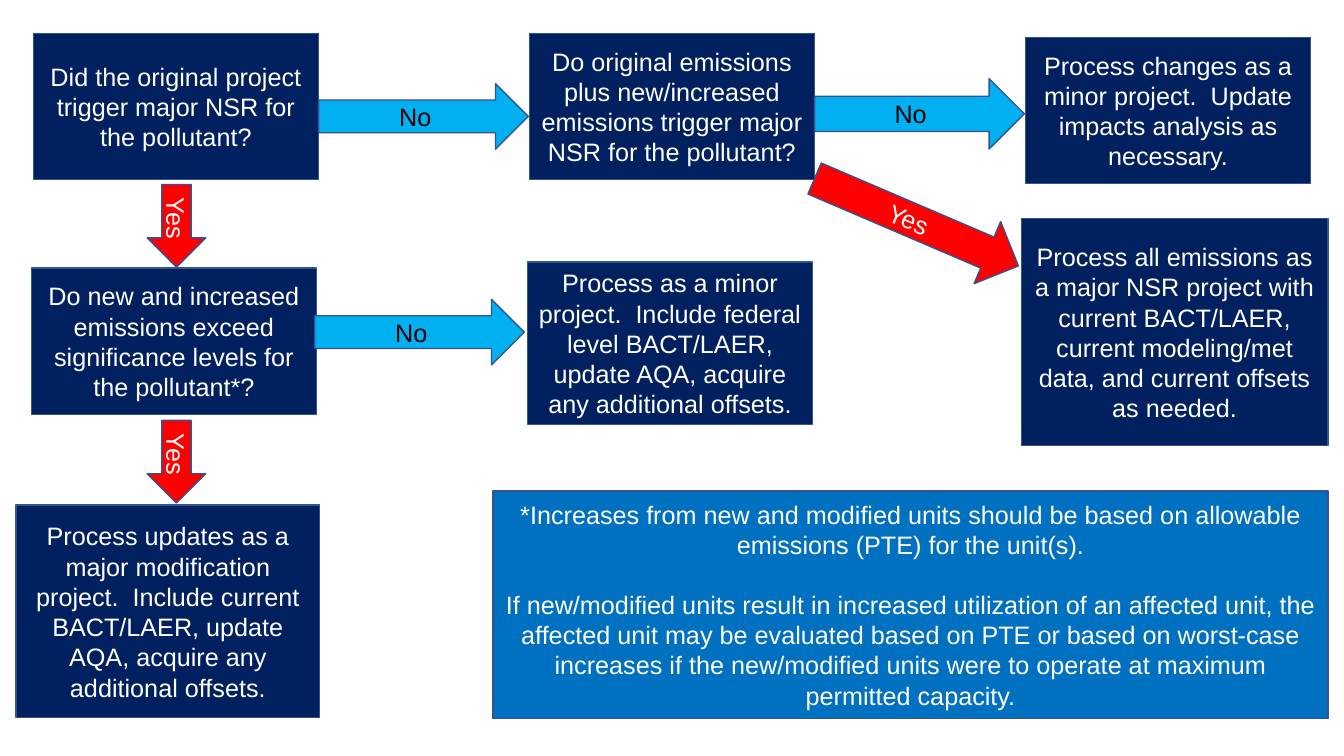
from dataclasses import dataclass

import pptx
import pptx.dml.color
import pptx.enum.shapes
import pptx.enum.text
import pptx.util

Inches = pptx.util.Inches
Kind = pptx.enum.shapes.MSO_SHAPE


@dataclass(frozen=True)
class Theme:
    navy: str = "002060"
    blue: str = "0070C0"
    sky: str = "00B0F0"
    red: str = "FF0000"
    outline: str = "325491"
    white: str = "FFFFFF"
    black: str = "000000"
    font: str = "Arial"
    text_size: int = 18
    paragraph_gap: int = 21
    line_width: int = 1


@dataclass(frozen=True)
class Box:
    left: float
    top: float
    width: float
    height: float

    def inner(self, left, top, width, height):
        """Return a box whose left and top are offsets within this one."""
        return Box(self.left + left, self.top + top, width, height)


THEME = Theme()
NODE_WIDTH, NODE_HEIGHT = 2.83, 1.45
COLUMN_STEP = 4.92
ARROW_WIDTH = 2.08


def color(value):
    return pptx.dml.color.RGBColor.from_string(value)


def add_block(page, box, kind, fill, text_color, paragraphs, rotation=0):
    shape = page.shapes.add_shape(kind, Inches(box.left), Inches(box.top),
                                  Inches(box.width), Inches(box.height))
    shape.rotation = rotation
    shape.shadow.inherit = False
    shape.fill.solid()
    shape.fill.fore_color.rgb = color(fill)
    shape.line.color.rgb = color(THEME.outline)
    shape.line.width = pptx.util.Pt(THEME.line_width)
    frame = shape.text_frame
    frame.word_wrap = True
    frame.vertical_anchor = pptx.enum.text.MSO_ANCHOR.MIDDLE
    frame.text = "\n".join(paragraphs)
    for index, para in enumerate(frame.paragraphs):
        para.alignment = pptx.enum.text.PP_ALIGN.CENTER
        if index:
            para.space_before = pptx.util.Pt(THEME.paragraph_gap)
        for span in para.runs:
            span.font.name = THEME.font
            span.font.size = pptx.util.Pt(THEME.text_size)
            span.font.color.rgb = color(text_color)


def add_step(page, box, *paragraphs, fill=THEME.navy):
    add_block(page, box, Kind.FLOWCHART_PROCESS, fill, THEME.white, paragraphs)


def add_no_arrow(page, box):
    add_block(page, box, Kind.RIGHT_ARROW, THEME.sky, THEME.black, ["No"])


def add_yes_arrow(page, box, rotation=90):
    add_block(page, box, Kind.RIGHT_ARROW, THEME.red, THEME.white, ["Yes"], rotation)


def add_trigger_row(page, area):
    """Questions about the trigger, and the two outcomes at the right."""
    add_step(page, area.inner(0, 0, NODE_WIDTH, NODE_HEIGHT),
             "Did the original project trigger major NSR for the pollutant?")
    add_no_arrow(page, area.inner(NODE_WIDTH, 0.5, ARROW_WIDTH, 0.65))
    add_step(page, area.inner(COLUMN_STEP, 0, NODE_WIDTH, NODE_HEIGHT),
             "Do original emissions plus new/increased emissions trigger "
             "major NSR for the pollutant?")
    add_no_arrow(page, area.inner(COLUMN_STEP + NODE_WIDTH, 0.45, ARROW_WIDTH, 0.7))
    add_step(page, area.inner(2 * COLUMN_STEP, 0.04, NODE_WIDTH, NODE_HEIGHT),
             "Process changes as a minor project.  Update impacts analysis "
             "as necessary.")
    add_yes_arrow(page, area.inner(7.66, 1.54, 2.2, 0.67), rotation=23.2)
    add_step(page, area.inner(9.8, 1.84, 3.04, 2.25),
             "Process all emissions as a major NSR project with current "
             "BACT/LAER, current modeling/met data, and current offsets as needed.")


def add_significance_branch(page, area):
    """Significance question with its minor and major outcomes."""
    for top in (0, 2.34):
        add_yes_arrow(page, area.inner(1.18, top, 0.82, 0.58))
    add_step(page, area.inner(0.15, 0.71, NODE_WIDTH, NODE_HEIGHT),
             "Do new and increased emissions exceed significance levels "
             "for the pollutant*?")
    add_no_arrow(page, area.inner(2.96, 1.02, ARROW_WIDTH, 0.65))
    add_step(page, area.inner(0.15 + COLUMN_STEP, 0.65, NODE_WIDTH, 1.61),
             "Process as a minor project.  Include federal level BACT/LAER, "
             "update AQA, acquire any additional offsets.")
    add_step(page, area.inner(0, 3.06, 3.01, 2.11),
             "Process updates as a major modification project.  Include current "
             "BACT/LAER, update AQA, acquire any additional offsets.")


def add_footnote(page, area):
    add_step(page, area,
             "*Increases from new and modified units should be based on "
             "allowable emissions (PTE) for the unit(s).",
             "If new/modified units result in increased utilization of an "
             "affected unit, the affected unit may be evaluated based on PTE or "
             "based on worst-case increases if the new/modified units were to "
             "operate at maximum permitted capacity.",
             fill=THEME.blue)


def main():
    deck = pptx.Presentation()
    deck.slide_width, deck.slide_height = Inches(13.33), Inches(7.5)
    page = deck.slides.add_slide(deck.slide_layouts[6])
    add_trigger_row(page, Box(0.33, 0.33, 12.84, 4.09))
    add_significance_branch(page, Box(0.16, 1.95, 7.9, 5.17))
    add_footnote(page, Box(4.89, 4.87, 8.28, 2.26))
    deck.save("out.pptx")


if __name__ == "__main__":
    main()
